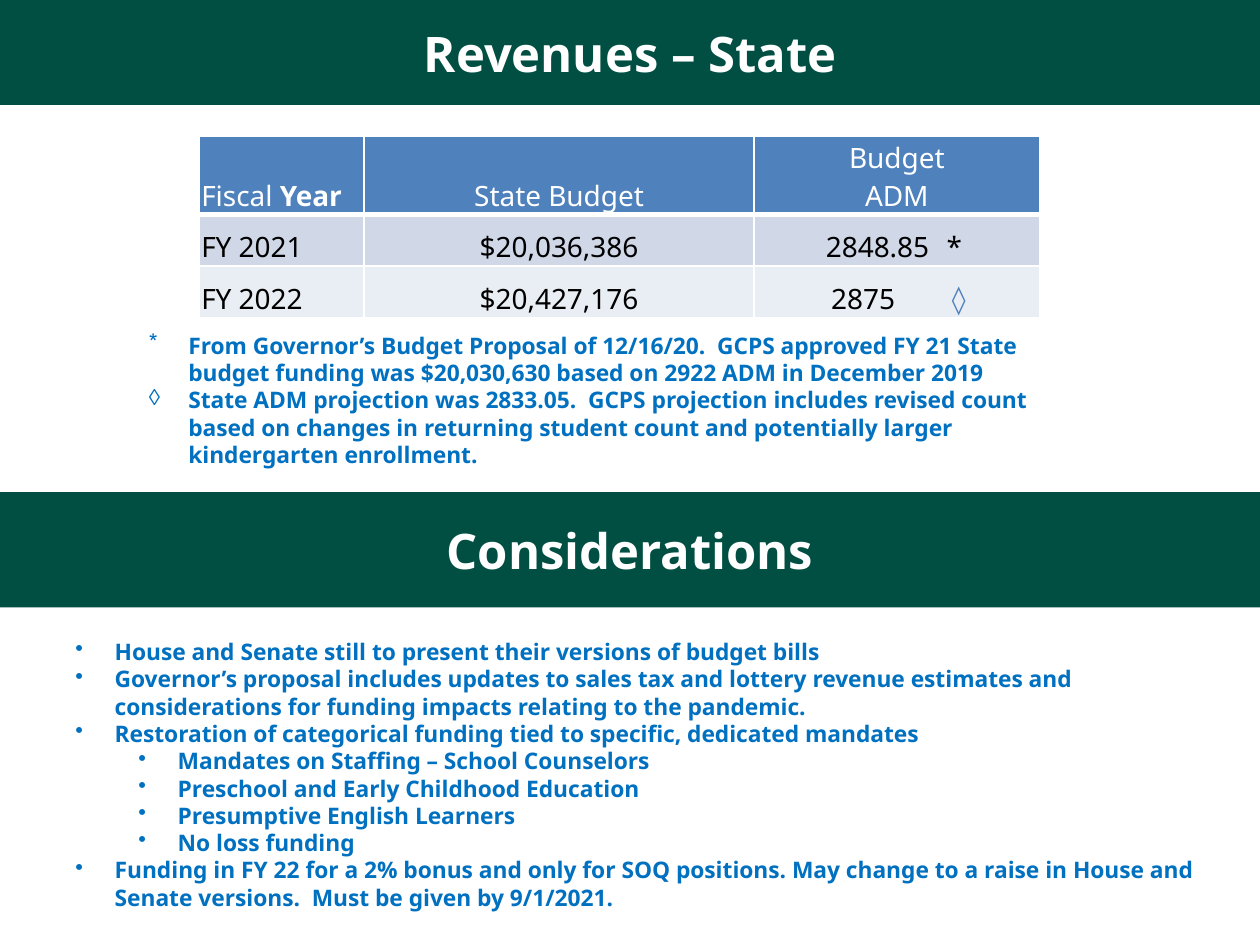
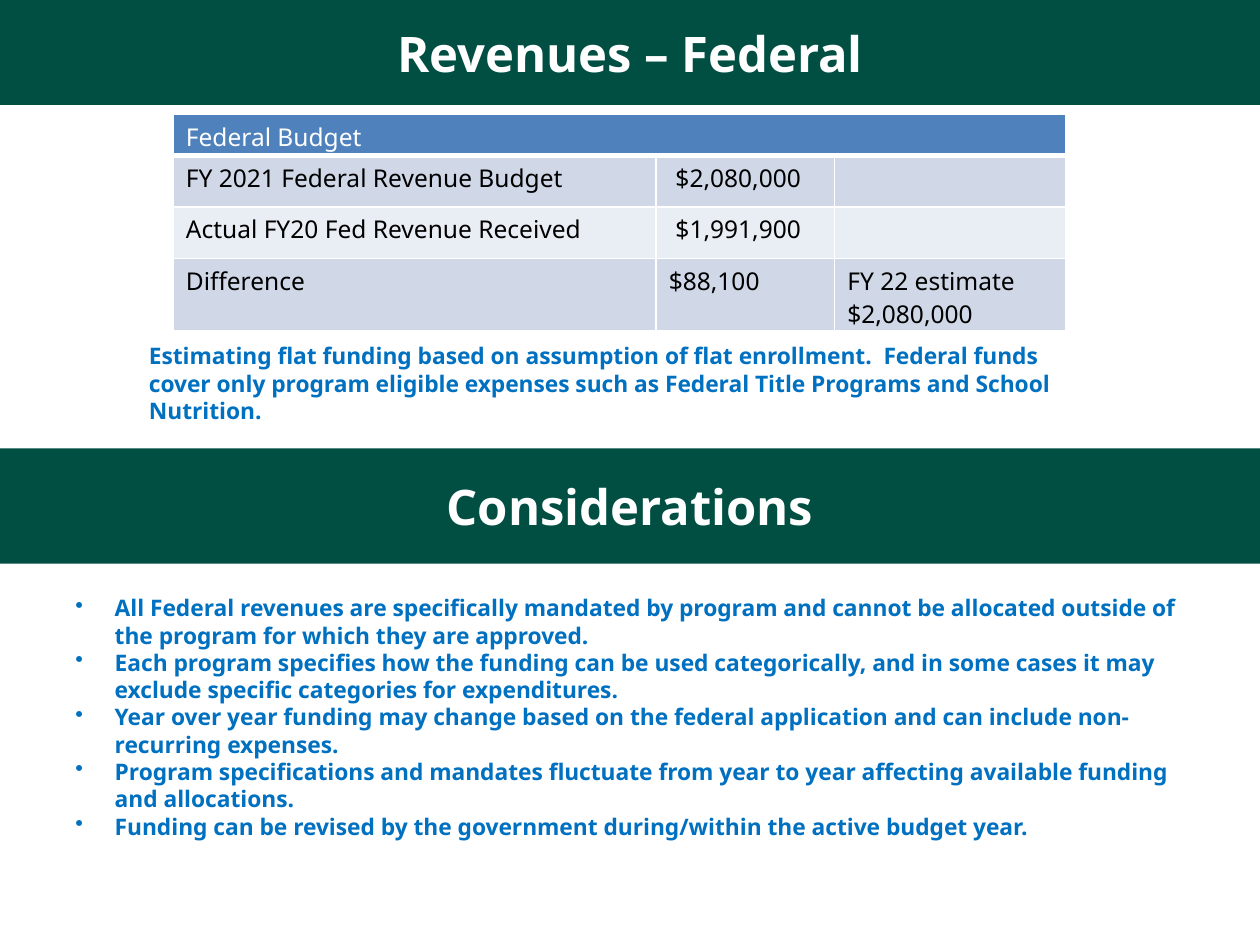
from lxml.etree import SubElement
from pptx import Presentation
from pptx.dml.color import RGBColor
from pptx.enum.shapes import MSO_SHAPE
from pptx.enum.text import MSO_ANCHOR, PP_ALIGN
from pptx.oxml.ns import qn
from pptx.util import Pt

LEFT, MID = PP_ALIGN.LEFT, PP_ALIGN.CENTER
GREEN, BLUE, WHITE, BLACK = "004F42", "0070C0", "FFFFFF", "000000"
HEAD, ODD, EVEN = "4F81BD", "D0D8E8", "E9EDF4"
WIDE, HIGH, STEP = 720, 540, 22.5

SLIDES = [
    {
        "title": "Revenues – State",
        "grid": {
            "box": (114, 78), "cols": (94, 223, 163), "rows": (44, 29.5, 29.5),
            "size": 16, "anchor": MSO_ANCHOR.BOTTOM, "pads": (1, 1, 0),
            "aligns": (LEFT, MID, MID), "merge": False, "tab": 69,
            "inset": {(1, 2): 41, (2, 2): 44},
            "cells": [
                [[[("Fiscal ", {}), ("Year", {"bold": True})]], "State Budget", "Budget\vADM"],
                ["FY 2021", "$20,036,386", "2848.85\t*"],
                ["FY 2022", "$20,427,176", [[("2875\t", {}), ("◊", {"color": HEAD})]]],
            ],
        },
        "note": (186, 86, [
            ("*", 0, "From Governor’s Budget Proposal of 12/16/20.  GCPS approved FY 21 State budget funding was $20,030,630 based on 2922 ADM in December 2019"),
            ("◊", 0, "State ADM projection was 2833.05.  GCPS projection includes revised count based on changes in returning student count and potentially larger kindergarten enrollment."),
        ]),
        "band": 281.2,
        "points": (361, 165, [
            ("•", 0, "House and Senate still to present their versions of budget bills"),
            ("•", 0, "Governor’s proposal includes updates to sales tax and lottery revenue estimates and considerations for funding impacts relating to the pandemic."),
            ("•", 0, "Restoration of categorical funding tied to specific, dedicated mandates"),
            ("•", 1, "Mandates on Staffing – School Counselors"),
            ("•", 1, "Preschool and Early Childhood Education"),
            ("•", 1, "Presumptive English Learners"),
            ("•", 1, "No loss funding"),
            ("•", 0, "Funding in FY 22 for a 2% bonus and only for SOQ positions. May change to a raise in House and Senate versions.  Must be given by 9/1/2021."),
        ]),
    },
    {
        "title": "Revenues – Federal",
        "grid": {
            "box": (99, 65.5), "cols": (276, 102, 132), "rows": (23.5, 29.4, 29.4, 40),
            "size": 14, "anchor": MSO_ANCHOR.TOP, "pads": (7.2, 3, 0),
            "aligns": (LEFT, LEFT, LEFT), "merge": True, "tab": 0,
            "inset": {(1, 1): 11, (2, 1): 11},
            "cells": [
                ["Federal Budget", "", ""],
                ["FY 2021 Federal Revenue Budget", "$2,080,000", ""],
                ["Actual FY20 Fed Revenue Received", "$1,991,900", ""],
                ["Difference", "$88,100", [[("FY 22 estimate", {})], [("$2,080,000", {})]]],
            ],
        },
        "note": (192, 55, [
            ("", 0, "Estimating flat funding based on assumption of flat enrollment.  Federal funds cover only program eligible expenses such as Federal Title Programs and School Nutrition."),
        ]),
        "band": 256.2,
        "points": (336, 149, [
            ("•", 0, "All Federal revenues are specifically mandated by program and cannot be allocated outside of the program for which they are approved."),
            ("•", 0, "Each program specifies how the funding can be used categorically, and in some cases it may exclude specific categories for expenditures."),
            ("•", 0, "Year over year funding may change based on the federal application and can include non-recurring expenses."),
            ("•", 0, "Program specifications and mandates fluctuate from year to year affecting available funding and allocations."),
            ("•", 0, "Funding can be revised by the government during/within the active budget year."),
        ]),
    },
]


def paint(color, code):
    color.rgb = RGBColor.from_string(code)


def fill(item, code):
    item.fill.solid()
    paint(item.fill.fore_color, code)


def apply(item, vals):
    for key, val in vals.items():
        if key == "color":
            paint(item.color, val)
        else:
            setattr(item, key, val)


def write(para, text, size, color, bold, more={}):
    for num, part in enumerate(text.split("\v")):
        if num:
            para.add_line_break()
        run = para.add_run()
        run.text = part
        look = {"name": "Noto Sans", "size": Pt(size), "bold": bold, "color": color}
        apply(run.font, {**look, **more})


def banner(shape, text, top, high):
    apply(shape, {"left": 0, "top": Pt(top), "width": Pt(WIDE), "height": Pt(high)})
    fill(shape, GREEN)
    frame = shape.text_frame
    apply(frame, {"word_wrap": True, "vertical_anchor": MSO_ANCHOR.MIDDLE})
    para = frame.paragraphs[0]
    para.alignment = MID
    write(para, text, 28, WHITE, True)


def listing(slide, left, wide, spec_):
    top, high, items = spec_
    frame = slide.shapes.add_textbox(Pt(left), Pt(top), Pt(wide), Pt(high)).text_frame
    frame.word_wrap = True
    for num, (mark, level, text) in enumerate(items):
        para = frame.add_paragraph() if num else frame.paragraphs[0]
        if mark:
            props = para._p.get_or_add_pPr()
            props.set("marL", str(Pt(STEP + 36 * level)))
            props.set("indent", str(Pt(-STEP)))
            SubElement(props, qn("a:buChar"), char=mark)
        apply(para, {"level": level, "line_spacing": Pt(15.6)})
        write(para, text, 13, BLUE, True)


def border(cell, head):
    props = cell._tc.get_or_add_tcPr()
    for side in "LRTB":
        wide = 3 if head and side == "B" else 1
        line = SubElement(props, qn("a:ln" + side), w=str(Pt(wide)))
        SubElement(SubElement(line, qn("a:solidFill")), qn("a:srgbClr"), val=WHITE)


def table(slide, grid):
    cols, rows = grid["cols"], grid["rows"]
    area = [Pt(val) for val in (*grid["box"], sum(cols), sum(rows))]
    tab = slide.shapes.add_table(len(rows), len(cols), *area).table
    for col, wide in zip(tab.columns, cols):
        col.width = Pt(wide)
    for row, high in zip(tab.rows, rows):
        row.height = Pt(high)
    if grid["merge"]:
        tab.cell(0, 0).merge(tab.cell(0, len(cols) - 1))
    side, top, base = grid["pads"]
    for r, line in enumerate(grid["cells"]):
        for c, text in enumerate(line):
            cell = tab.cell(r, c)
            border(cell, r == 0)
            fill(cell, HEAD if r == 0 else ODD if r % 2 else EVEN)
            inset = grid["inset"].get((r, c))
            apply(cell, {
                "vertical_anchor": grid["anchor"],
                "margin_left": Pt(inset or side), "margin_right": Pt(side),
                "margin_top": Pt(top), "margin_bottom": Pt(base),
            })
            if not text:
                continue
            paras = [[(text, {})]] if isinstance(text, str) else text
            frame = cell.text_frame
            for num, runs in enumerate(paras):
                para = frame.add_paragraph() if num else frame.paragraphs[0]
                if inset and grid["tab"]:
                    stops = SubElement(para._p.get_or_add_pPr(), qn("a:tabLst"))
                    SubElement(stops, qn("a:tab"), pos=str(Pt(grid["tab"])), algn="l")
                para.alignment = LEFT if inset else grid["aligns"][c]
                for words, more in runs:
                    write(para, words, grid["size"], BLACK if r else WHITE, False, more)


def main():
    deck = Presentation()
    apply(deck, {"slide_width": Pt(WIDE), "slide_height": Pt(HIGH)})
    for data in SLIDES:
        slide = deck.slides.add_slide(deck.slide_layouts[5])
        banner(slide.shapes.title, data["title"], 0, 60)
        table(slide, data["grid"])
        listing(slide, 78, 552, data["note"])
        band = slide.shapes.add_shape(MSO_SHAPE.RECTANGLE, 0, 0, Pt(WIDE), Pt(66))
        band.shadow.inherit = False
        band.line.fill.background()
        banner(band, "Considerations", data["band"], 66)
        listing(slide, 36, 654, data["points"])
    deck.save("out.pptx")


if __name__ == "__main__":
    main()
